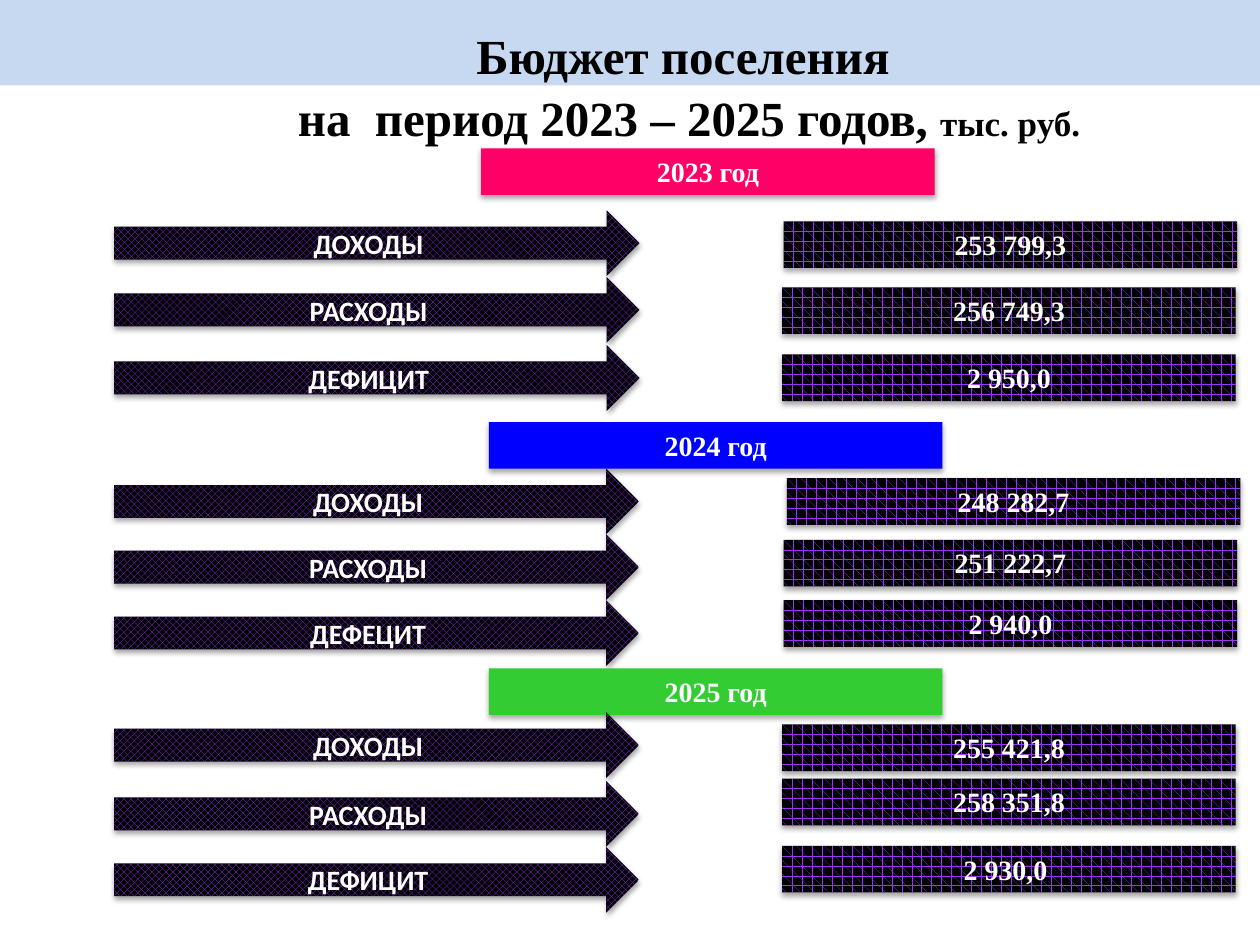
from dataclasses import dataclass

from lxml.etree import SubElement
from pptx import Presentation
from pptx.dml.color import RGBColor as Rgb
from pptx.enum.dml import MSO_PATTERN as Pattern
from pptx.enum.shapes import MSO_SHAPE as Preset
from pptx.enum.text import MSO_ANCHOR as Anchor, MSO_AUTO_SIZE as AutoSize, PP_ALIGN as Align
from pptx.oxml.ns import qn
from pptx.util import Pt


@dataclass(frozen=True)
class Theme:
    banner: str = "C6D9F1"
    ink: str = "000000"
    outline: str = "467AB8"
    light: str = "FFFFFF"
    grid: str = "9933FF"
    serif: str = "Times New Roman"
    sans: str = "Calibri"
    title_size: int = 28
    unit_size: int = 20
    label_size: int = 16


BOX_SIZE = (259.2, 26.64)
ARROW_SIZE = (300.2, 37.6)

# Year, colour, left and top of its heading, left of its arrows,
# then label, arrow top, value, value left and value top for each row
YEARS = [
    ("2023 год", "FF0066", 275, 84.8, 65.3, [
        ("ДОХОДЫ", 120.2, "253 799,3", 447.8, 126.5),
        ("РАСХОДЫ", 158.3, "256 749,3", 447, 164.2),
        ("ДЕФИЦИТ", 197.2, "2 950,0", 447, 202.6)]),
    ("2024 год", "0000FF", 279.4, 241.2, 65, [
        ("ДОХОДЫ", 267.8, "248 282,7", 449.6, 273.3),
        ("РАСХОДЫ", 305.3, "251 222,7", 447.8, 308.5),
        ("ДЕФЕЦИТ", 343, "2 940,0", 447.8, 343)]),
    ("2025 год", "33CC33", 279.4, 381.9, 65, [
        ("ДОХОДЫ", 407, "255 421,8", 447, 414),
        ("РАСХОДЫ", 446.3, "258 351,8", 447, 445),
        ("ДЕФИЦИТ", 484, "2 930,0 ", 447, 483.4)]),
]


class SlideBuilder:
    def __init__(self, slide, theme):
        self.slide = slide
        self.theme = theme

    def add_run(self, paragraph, text, size, color, font_name):
        run = paragraph.add_run()
        run.text = text
        font = run.font
        font.name, font.size, font.bold = font_name, Pt(size), True
        font.color.rgb = Rgb.from_string(color)
        return run

    def outline_run(self, run):
        properties = run._r.get_or_add_rPr()
        line = SubElement(properties, qn("a:ln"), w=str(Pt(0.83)))
        fill = SubElement(line, qn("a:solidFill"))
        SubElement(fill, qn("a:srgbClr"), val=self.theme.outline)
        properties.insert(0, line)

    def add_shadow(self, shape):
        effects = shape._element.spPr.find(qn("a:effectLst"))
        shadow = SubElement(effects, qn("a:outerShdw"), blurRad="40000", dist="23000",
                            dir="5400000", rotWithShape="0")
        color = SubElement(shadow, qn("a:srgbClr"), val="000000")
        SubElement(color, qn("a:alpha"), val="35000")

    def add_preset(self, preset, left, top, size, color=None, pattern=None):
        shape = self.slide.shapes.add_shape(preset, Pt(left), Pt(top), *map(Pt, size))
        shape.shadow.inherit = False
        shape.line.fill.background()
        if pattern is None:
            shape.fill.solid()
            shape.fill.fore_color.rgb = Rgb.from_string(color)
        else:
            shape.fill.patterned()
            shape.fill.pattern = pattern
            shape.fill.fore_color.rgb = Rgb.from_string(self.theme.grid)
            shape.fill.back_color.rgb = Rgb.from_string(self.theme.ink)
        return shape

    def add_label(self, shape, text, font_name):
        self.add_shadow(shape)
        paragraph = shape.text_frame.paragraphs[0]
        paragraph.alignment = Align.CENTER
        self.add_run(paragraph, text, self.theme.label_size, self.theme.light, font_name)

    def add_banner(self):
        banner = self.add_preset(Preset.RECTANGLE, 0, 0, (720, 48.8), self.theme.banner)
        self.slide.shapes._spTree.insert(2, banner._element)  # behind the title

    def add_title(self, lines):
        title = self.slide.shapes.title
        title.left, title.top, title.width, title.height = map(Pt, (82, 9.4, 623.5, 74.9))
        frame = title.text_frame
        frame.word_wrap = True
        frame.auto_size = AutoSize.SHAPE_TO_FIT_TEXT
        frame.vertical_anchor = Anchor.TOP
        for index, runs in enumerate(lines):
            paragraph = frame.add_paragraph() if index else frame.paragraphs[0]
            paragraph.alignment = Align.CENTER
            paragraph.line_spacing = 1.05
            for text, size in runs:
                run = self.add_run(paragraph, text, size, self.theme.ink, self.theme.serif)
                self.outline_run(run)

    def add_box(self, text, left, top, color=None, pattern=None):
        box = self.add_preset(Preset.RECTANGLE, left, top, BOX_SIZE, color, pattern)
        box.text_frame.word_wrap = True
        box.text_frame.auto_size = AutoSize.SHAPE_TO_FIT_TEXT
        box.text_frame.vertical_anchor = Anchor.TOP
        self.add_label(box, text, self.theme.serif)

    def add_arrow(self, text, left, top):
        arrow = self.add_preset(Preset.RIGHT_ARROW, left, top, ARROW_SIZE,
                                pattern=Pattern.LARGE_CHECKER_BOARD)
        arrow.text_frame.vertical_anchor = Anchor.MIDDLE
        self.add_label(arrow, text, self.theme.sans)


def main():
    presentation = Presentation()
    presentation.slide_width, presentation.slide_height = Pt(720), Pt(540)
    slide = presentation.slides.add_slide(presentation.slide_layouts[5])
    theme = Theme()
    builder = SlideBuilder(slide, theme)

    # Banner and title
    builder.add_banner()
    builder.add_title([
        [("Бюджет поселения ", theme.title_size)],
        [("на  период 2023 – 2025 годов, ", theme.title_size), ("тыс. руб.", theme.unit_size)],
    ])

    # Heading and rows of each year
    for year, color, year_left, year_top, arrow_left, rows in YEARS:
        builder.add_box(year, year_left, year_top, color)
        for label, arrow_top, value, value_left, value_top in rows:
            builder.add_arrow(label, arrow_left, arrow_top)
            builder.add_box(value, value_left, value_top, pattern=Pattern.PLAID)

    presentation.save("out.pptx")


if __name__ == "__main__":
    main()
